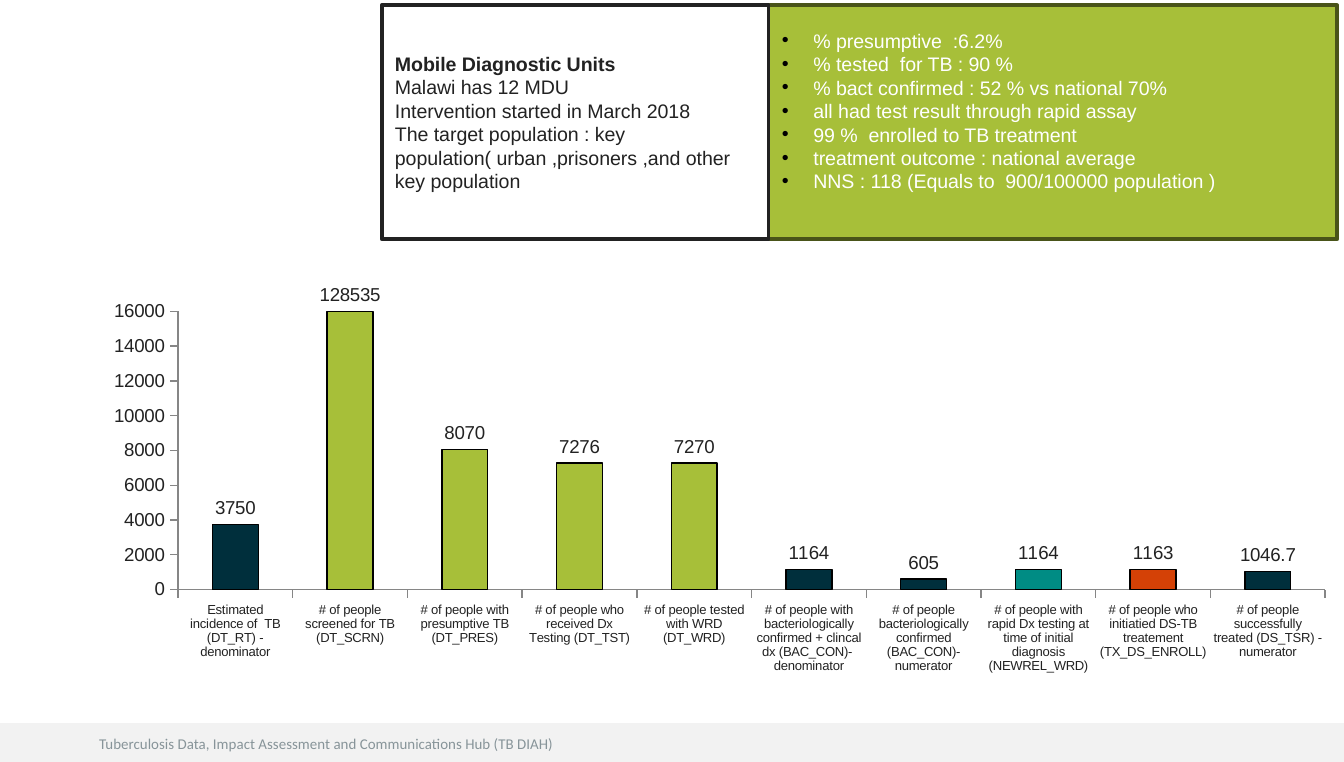
import lxml.etree
import pptx
import pptx.chart.data
import pptx.dml.color
import pptx.enum.chart
import pptx.enum.shapes
import pptx.enum.text
import pptx.oxml
import pptx.oxml.ns
import pptx.util

Pt = pptx.util.Pt
qn = pptx.oxml.ns.qn

INK, LIME, NAVY = "222222", "A7BF39", "002F3C"
FOOTER = "Tuberculosis Data, Impact Assessment and Communications Hub (TB DIAH)"
INTRODUCTION = [
    "Mobile Diagnostic Units",
    "Malawi has 12 MDU",
    "Intervention started in March 2018",
    "The target population : key population( urban ,prisoners ,and other key population",
]
RESULTS = [
    "% presumptive  :6.2%",
    "% tested  for TB : 90 %",
    "% bact confirmed : 52 % vs national 70%",
    "all had test result through rapid assay",
    "99 %  enrolled to TB treatment",
    "treatment outcome : national average",
    "NNS : 118 (Equals to  900/100000 population )",
]
CASCADE = [
    ("Estimated incidence of  TB (DT_RT) - denominator", 3750, NAVY),
    ("# of people screened for TB (DT_SCRN)", 128535, LIME),
    ("# of people with presumptive TB (DT_PRES)", 8070, LIME),
    ("# of people who received Dx Testing (DT_TST)", 7276, LIME),
    ("# of people tested with WRD (DT_WRD)", 7270, LIME),
    ("# of people with bacteriologically confirmed + clincal dx (BAC_CON)-  denominator",
     1164, NAVY),
    ("# of people bacteriologically confirmed (BAC_CON)- numerator", 605, NAVY),
    ("# of people with rapid Dx testing at time of initial diagnosis (NEWREL_WRD)",
     1164, "008C84"),
    ("# of people who initiatied DS-TB treatement (TX_DS_ENROLL)", 1163, "D44106"),
    ("# of people successfully treated (DS_TSR) - numerator", 1046.7, NAVY),
]


def color(hex_string):
    return pptx.dml.color.RGBColor.from_string(hex_string)


def fill(target, hex_string):
    target.fill.solid()
    target.fill.fore_color.rgb = color(hex_string)


def outline(line, hex_string, width):
    line.color.rgb = color(hex_string)
    line.width = Pt(width)


def set_font(font, size, hex_string, name="Arial"):
    font.size = Pt(size)
    font.name = name
    font.color.rgb = color(hex_string)


def add_rectangle(slide, left, top, width, height, fill_color):
    shape = slide.shapes.add_shape(
        pptx.enum.shapes.MSO_SHAPE.RECTANGLE, Pt(left), Pt(top), Pt(width), Pt(height))
    shape.shadow.inherit = False
    fill(shape, fill_color)
    shape.line.fill.background()
    return shape


def add_bullet(paragraph):
    properties = paragraph._p.get_or_add_pPr()
    properties.set("marL", str(Pt(16.9)))
    properties.set("indent", str(-Pt(16.9)))
    bullet_color = lxml.etree.SubElement(properties, qn("a:buClr"))
    lxml.etree.SubElement(bullet_color, qn("a:srgbClr")).set("val", "000000")
    lxml.etree.SubElement(properties, qn("a:buFont")).set("typeface", "Arial")
    lxml.etree.SubElement(properties, qn("a:buChar")).set("char", "•")


def add_panel(slide, left, width, fill_color, line_color, text_color, lines, bulleted=False):
    """Outlined box at the top of the slide, with one paragraph per line."""
    panel = add_rectangle(slide, left, 2.9, width, 125.3, fill_color)
    outline(panel.line, line_color, 2)
    frame = panel.text_frame
    frame.word_wrap = True
    frame.vertical_anchor = pptx.enum.text.MSO_ANCHOR.MIDDLE
    frame.text = "\n".join(lines)
    for paragraph in frame.paragraphs:
        paragraph.alignment = pptx.enum.text.PP_ALIGN.LEFT
        if bulleted:
            add_bullet(paragraph)
        set_font(paragraph.font, 10.5, text_color)
    return frame


def add_footer(slide):
    add_rectangle(slide, 0, 387.4, 720, 20.84, "F2F2F2")
    box = slide.shapes.add_textbox(Pt(46), Pt(390.1), Pt(360), Pt(17))
    box.text_frame.word_wrap = True
    paragraph = box.text_frame.paragraphs[0]
    paragraph.text = FOOTER
    set_font(paragraph.font, 8, "879499", "Calibri")


def set_plot_layout(chart, **fractions):
    """Place the inner plot area at fractions of the chart's size."""
    plot_area = chart._chartSpace.chart.plotArea
    for old_layout in plot_area.findall(qn("c:layout")):
        plot_area.remove(old_layout)
    layout = lxml.etree.Element(qn("c:layout"))
    manual = lxml.etree.SubElement(layout, qn("c:manualLayout"))
    settings = {"layoutTarget": "inner", "xMode": "edge", "yMode": "edge", **fractions}
    for name, value in settings.items():
        lxml.etree.SubElement(manual, qn("c:" + name)).set("val", str(value))
    plot_area.insert(0, layout)


def style_axis(axis, size):
    axis.has_major_gridlines = False
    axis.major_tick_mark = pptx.enum.chart.XL_TICK_MARK.OUTSIDE
    axis.minor_tick_mark = pptx.enum.chart.XL_TICK_MARK.NONE
    outline(axis.format.line, "868686", 0.75)
    set_font(axis.tick_labels.font, size, INK)


def add_cascade_chart(slide):
    labels, values, colors = zip(*CASCADE)
    data = pptx.chart.data.CategoryChartData(number_format="General")
    data.categories = labels
    data.add_series("Series 1", values)
    chart = slide.shapes.add_chart(
        pptx.enum.chart.XL_CHART_TYPE.COLUMN_CLUSTERED,
        Pt(0), Pt(138.2), Pt(711.4), Pt(349.2), data).chart
    chart.has_title = False
    chart.has_legend = False
    set_font(chart.font, 10, INK)
    set_plot_layout(chart, x=0.134, y=0.082, w=0.864, h=0.427)

    style_axis(chart.category_axis, 7)
    style_axis(chart.value_axis, 10)
    chart.value_axis.minimum_scale = 0
    chart.value_axis.maximum_scale = 16000
    chart.value_axis.major_unit = 2000

    plot = chart.plots[0]
    plot.gap_width = 150
    plot.vary_by_categories = False
    plot.has_data_labels = True
    plot.data_labels.show_value = True
    plot.data_labels.position = pptx.enum.chart.XL_LABEL_POSITION.OUTSIDE_END
    set_font(plot.data_labels.font, 10, INK)

    series = plot.series[0]
    series.invert_if_negative = False
    fill(series.format, LIME)
    outline(series.format.line, "000000", 0.75)
    for index, bar_color in enumerate(colors):
        if bar_color != LIME:
            bar = series.points[index].format
            fill(bar, bar_color)
            outline(bar.line, "000000", 0.75)


def main():
    presentation = pptx.Presentation()
    presentation.slide_width = Pt(720)
    presentation.slide_height = Pt(408.24)
    slide = presentation.slides.add_slide(presentation.slide_layouts[6])

    add_footer(slide)
    add_cascade_chart(slide)
    results = add_panel(slide, 411.8, 304.6, LIME, "495419", "FFFFFF", RESULTS, bulleted=True)
    results.margin_bottom = Pt(16)
    introduction = add_panel(slide, 204.5, 207.3, "FFFFFF", INK, INK, INTRODUCTION)
    introduction.paragraphs[0].font.bold = True

    presentation.save("out.pptx")


if __name__ == "__main__":
    main()
